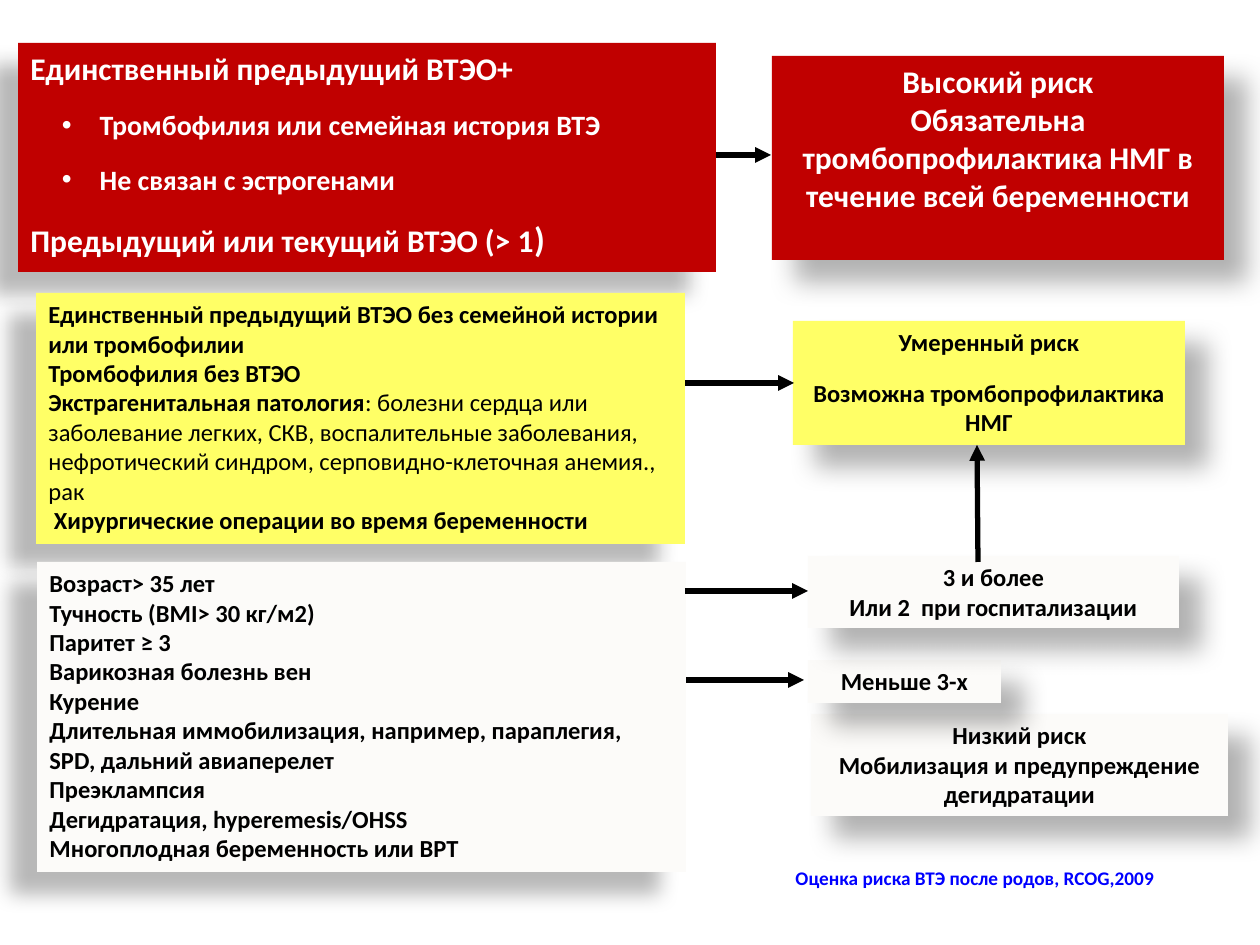
from lxml import etree
from pptx import Presentation
from pptx.dml.color import RGBColor
from pptx.enum import shapes, text
from pptx.oxml import ns
from pptx.util import Pt

SCALE = 914400 / 126
RED, YELLOW, PALE = "C00000", "FFFF66", "FCFBF9"
WHITE, BLACK, BLUE = "FFFFFF", "000000", "0000FF"
# opacity %, blur pt, distance pt, angle
LEFT, RIGHT = (28, 11.8, 19.7, 141), (30, 15, 18, 45)

# x1, y1, x2, y2
BACK = [(682, 155, 771, 155), (682, 680, 804, 680)]
FRONT = [(685, 383, 794, 383), (685, 591, 808, 591), (978, 562, 977, 445)]

# A line is a string or a list of (text, size, bold) runs
BULLETS = [
    [(" ", 16, False), ("Тромбофилия или семейная история ВТЭ", 16, True)],
    [(" Не связан с эстрогенами", 16, True)],
]
HIGH = [
    "Единственный предыдущий ВТЭО+",
    *BULLETS,
    [("Предыдущий или текущий ВТЭО (> 1", 18, True), (")", 20, True)],
]
MEDIUM = [
    "Единственный предыдущий ВТЭО без семейной истории или тромбофилии",
    "Тромбофилия без ВТЭО",
    [("Экстрагенитальная патология", 14, True),
     (": болезни сердца или заболевание легких, СКВ, воспалительные "
      "заболевания, нефротический синдром, серповидно-клеточная анемия., рак",
      14, False)],
    " Хирургические операции во время беременности",
]
LOW = [
    "Возраст> 35 лет",
    "Тучность (BMI> 30 кг/м2)",
    "Паритет ≥ 3",
    "Варикозная болезнь вен",
    "Курение",
    "Длительная иммобилизация, например, параплегия, SPD, дальний авиаперелет",
    "Преэклампсия",
    "Дегидратация, hyperemesis/OHSS",
    "Многоплодная беременность или ВРТ",
]
# place, fill, shadow, font colour, size, space before, lines
BOXES = [
    ((18, 43, 698, 229), RED, LEFT, WHITE, 18, 12, HIGH),
    ((772, 56, 452, 204), RED, RIGHT, WHITE, 18, 0,
     ["Высокий риск",
      "Обязательна тромбопрофилактика НМГ в течение всей беременности"]),
    ((36, 293, 649, 251), YELLOW, LEFT, BLACK, 14, 0, MEDIUM),
    ((37, 562, 649, 310), PALE, LEFT, BLACK, 14, 0, LOW),
    ((793, 321, 392, 124), YELLOW, RIGHT, BLACK, 14, 12,
     ["Умеренный риск", "Возможна тромбопрофилактика НМГ"]),
    ((811, 714, 417, 102), PALE, RIGHT, BLACK, 14, 0,
     ["Низкий риск", "Мобилизация и предупреждение дегидратации"]),
    ((808, 660, 193, 43), PALE, RIGHT, BLACK, 14, 0, ["Меньше 3-х"]),
    ((808, 556, 371, 72), PALE, RIGHT, BLACK, 14, 0,
     ["3 и более", "Или 2  при госпитализации"]),
]
NOTE = ((660, 860, 630, 37), "Оценка риска ВТЭ после родов, RCOG,2009")


def px(*nums):
    return [round(n * SCALE) for n in nums]


def rgb(code):
    return RGBColor.from_string(code)


def add(node, tag, **attrs):
    return etree.SubElement(node, ns.qn(tag),
                            {k: str(v) for k, v in attrs.items()})


def shade(shape, alpha, blur, dist, angle):
    """Give the shape an outer shadow."""
    fx = add(shape.element.spPr, "a:effectLst")
    out = add(fx, "a:outerShdw", blurRad=Pt(blur), dist=Pt(dist),
              dir=angle * 60000, algn="ctr", rotWithShape=0)
    tint = add(out, "a:srgbClr", val=BLACK)
    add(tint, "a:alpha", val=alpha * 1000)


def write(frame, lines, color, size, gap, align):
    frame.word_wrap = True
    frame.vertical_anchor = text.MSO_ANCHOR.TOP
    for i, line in enumerate(lines):
        para = frame.add_paragraph() if i else frame.paragraphs[0]
        para.alignment = align
        para.space_before = Pt(gap)
        if line in BULLETS:
            para.level = 1
            props = para._p.get_or_add_pPr()
            props.set("marL", "457200")
            props.set("indent", "-228600")
            add(props, "a:buFont", typeface="Arial")
            add(props, "a:buChar", char="•")
        parts = [(line, size, True)] if isinstance(line, str) else line
        for words, pts, bold in parts:
            run = para.add_run()
            run.text = words
            font = run.font
            font.name, font.size, font.bold = "Calibri", Pt(pts), bold
            font.color.rgb = rgb(color)


def arrow(slide, ends):
    line = slide.shapes.add_connector(shapes.MSO_CONNECTOR.STRAIGHT, *px(*ends))
    line.line.color.rgb = rgb(BLACK)
    line.line.width = Pt(3)
    add(line.line._get_or_add_ln(), "a:tailEnd", type="triangle")
    add(line.element.spPr, "a:effectLst")


def box(slide, place, fill, shadow, color, size, gap, lines):
    shape = slide.shapes.add_shape(shapes.MSO_SHAPE.RECTANGLE, *px(*place))
    shape.fill.solid()
    shape.fill.fore_color.rgb = rgb(fill)
    shape.line.fill.background()
    shade(shape, *shadow)
    align = text.PP_ALIGN.LEFT if shadow == LEFT else text.PP_ALIGN.CENTER
    write(shape.text_frame, lines, color, size, gap, align)


def main():
    deck = Presentation()
    deck.slide_width, deck.slide_height = px(1260, 945)
    slide = deck.slides.add_slide(deck.slide_layouts[6])
    for ends in BACK:
        arrow(slide, ends)
    for item in BOXES:
        box(slide, *item)
    for ends in FRONT:
        arrow(slide, ends)
    place, words = NOTE
    note = slide.shapes.add_textbox(*px(*place))
    write(note.text_frame, [words], BLUE, 11, 0, text.PP_ALIGN.CENTER)
    deck.save("out.pptx")


if __name__ == "__main__":
    main()
